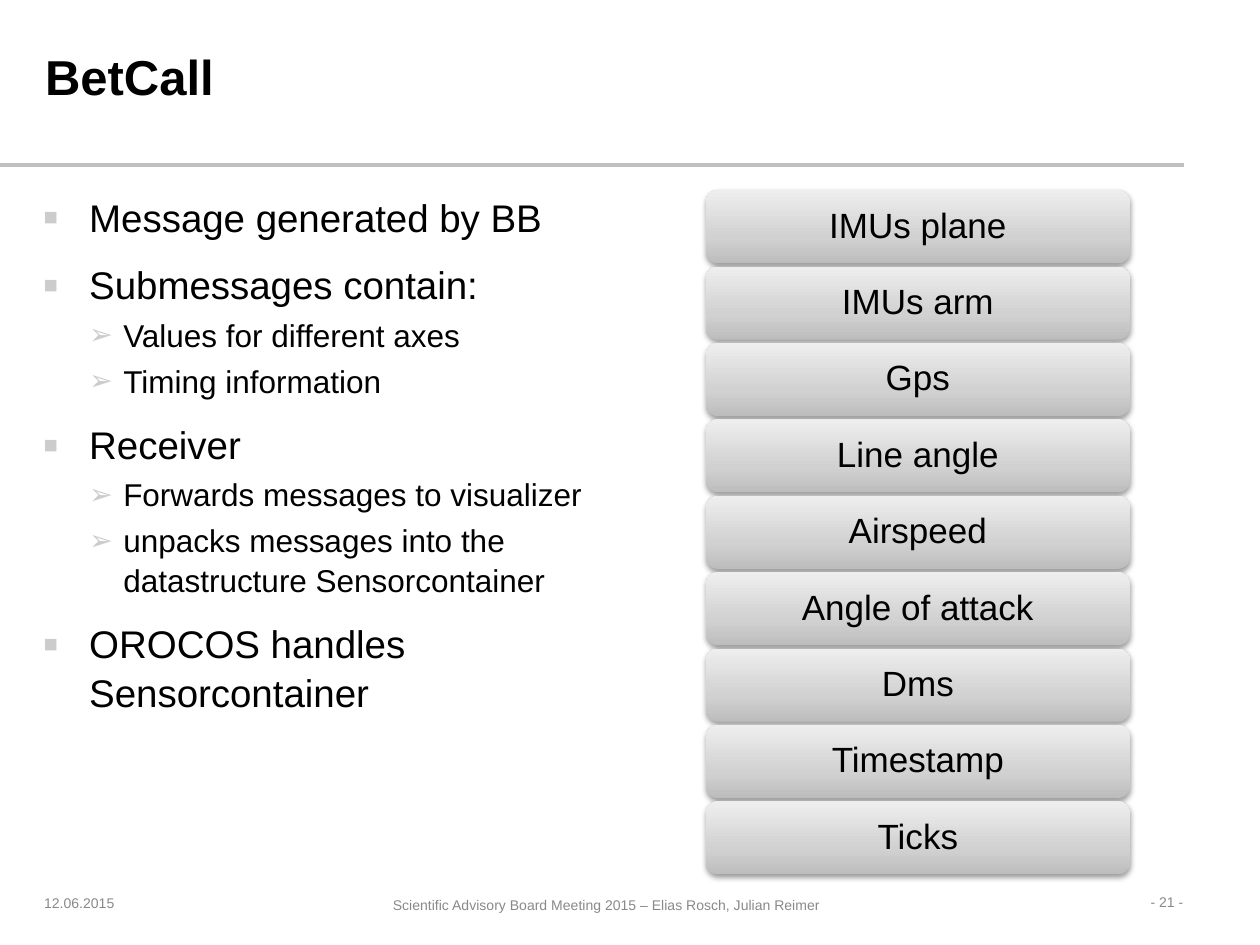
from lxml import etree
from pptx import Presentation
from pptx.dml.color import RGBColor
from pptx.enum.shapes import MSO_CONNECTOR, MSO_SHAPE
from pptx.enum.text import MSO_ANCHOR, PP_ALIGN
from pptx.oxml.ns import qn
from pptx.util import Inches, Pt

LEFT, CENTER, RIGHT = PP_ALIGN.LEFT, PP_ALIGN.CENTER, PP_ALIGN.RIGHT
TOP, MIDDLE = MSO_ANCHOR.TOP, MSO_ANCHOR.MIDDLE
BLACK, GREY, RULE, MARK = "000000", "898989", "C0C0C1", "CCCCCC"

# box, text, size, colour, bold, align, anchor, insets (x, y), line spacing
LABELS = [
    ((0.26, 0.06, 7.91, 1.14), "BetCall", 28, BLACK, True, LEFT, MIDDLE, (0.1, 0), 0.9),
    ((0.35, 6.94, 0.95, 0.46), "12.06.2015", 8, GREY, False, LEFT, MIDDLE, (0, 0), 1.0),
    ((1.64, 7.05, 6.35, 0.26),
     "Scientific Advisory Board Meeting 2015 – Elias Rosch, Julian Reimer",
     8, GREY, False, CENTER, MIDDLE, (0, 0), 1.0),
    ((8.15, 7.04, 1.34, 0.24), "- 21 -", 8, GREY, False, RIGHT, TOP, (0.1, 0.05), 1.0),
]

POINTS = [
    (1, "Message generated by BB"),
    (1, "Submessages contain:"),
    (2, "Values for different axes"),
    (2, "Timing information"),
    (1, "Receiver"),
    (2, "Forwards messages to visualizer"),
    (2, "unpacks messages into the datastructure Sensorcontainer"),
    (1, "OROCOS handles Sensorcontainer"),
]
POINTS_BOX = (0.04, 1.47, 5.24, 5.43)
# level: size, space before, margin, indent, bullet, bullet size in percent
LEVELS = {
    1: (22, 11, 0.57, -0.37, "▪", 120),
    2: (18, 3.6, 0.84, -0.27, "➢", 90),
}

FIELDS = ["IMUs plane", "IMUs arm", "Gps", "Line angle", "Airspeed",
          "Angle of attack", "Dms", "Timestamp", "Ticks"]
BAR_X, BAR_W, BAR_H = 5.6, 3.37, 0.58
FIRST_Y, LAST_Y = 1.51, 6.36
STOPS = [(0, "BDBDBD"), (35, "D1D1D1"), (100, "EEEEEE")]


def rgb(code):
    return RGBColor.from_string(code)


def child(node, tag, **attrs):
    """Append a DrawingML element and return it."""
    return etree.SubElement(node, qn("a:" + tag), {k: str(v) for k, v in attrs.items()})


def set_frame(shape, inset, anchor):
    frame = shape.text_frame
    frame.word_wrap = True
    frame.vertical_anchor = anchor
    frame.margin_left = frame.margin_right = Inches(inset[0])
    frame.margin_top = frame.margin_bottom = Inches(inset[1])
    return frame


def add_run(para, text, size, color=BLACK, bold=False):
    run = para.add_run()
    run.text = text
    font = run.font
    font.name, font.size, font.bold = "Arial", Pt(size), bold
    font.color.rgb = rgb(color)


def add_label(slide, box, text, size, color, bold, align, anchor, inset, spacing):
    shape = slide.shapes.add_textbox(*map(Inches, box))
    para = set_frame(shape, inset, anchor).paragraphs[0]
    para.alignment, para.line_spacing = align, spacing
    add_run(para, text, size, color, bold)


def add_rule(slide):
    line = slide.shapes.add_connector(
        MSO_CONNECTOR.STRAIGHT, 0, Inches(1.31), Inches(9.4), Inches(1.31))
    line.line.color.rgb = rgb(RULE)
    line.line.width = Pt(2.25)
    child(line._element.spPr, "effectLst")


def add_points(slide):
    shape = slide.shapes.add_textbox(*map(Inches, POINTS_BOX))
    frame = set_frame(shape, (0.1, 0.05), TOP)
    for i, (level, text) in enumerate(POINTS):
        size, before, margin, indent, mark, scale = LEVELS[level]
        para = frame.add_paragraph() if i else frame.paragraphs[0]
        para.level = level - 1
        para.line_spacing = 1.05
        para.space_before = Pt(before if i else 0)
        props = para._p.get_or_add_pPr()
        props.set("marL", str(Inches(margin)))
        props.set("indent", str(Inches(indent)))
        child(child(props, "buClr"), "srgbClr", val=MARK)
        child(props, "buSzPct", val=scale * 1000)
        child(props, "buFont", typeface="Arial")
        child(props, "buChar", char=mark)
        add_run(para, text, size)


def shade(shape):
    """Give a bar its grey gradient and soft drop shadow."""
    shape.fill.gradient()
    shape.fill.gradient_angle = 90
    props = shape._element.spPr
    grad = props.find(qn("a:gradFill"))
    stops = grad.find(qn("a:gsLst"))
    for old in list(stops):
        stops.remove(old)
    for pos, color in STOPS:
        child(child(stops, "gs", pos=pos * 1000), "srgbClr", val=color)
    grad.find(qn("a:lin")).set("ang", str(270 * 60000))
    shape.line.fill.background()
    shape.shadow.inherit = False
    drop = child(props.find(qn("a:effectLst")), "outerShdw", blurRad=Pt(3.1),
                 dist=Pt(1.6), dir=90 * 60000, rotWithShape=0)
    child(child(drop, "srgbClr", val=BLACK), "alpha", val=38000)


def add_bars(slide):
    pitch = (LAST_Y - FIRST_Y) / (len(FIELDS) - 1)
    for i, name in enumerate(FIELDS):
        box = (BAR_X, FIRST_Y + i * pitch, BAR_W, BAR_H)
        bar = slide.shapes.add_shape(MSO_SHAPE.ROUNDED_RECTANGLE, *map(Inches, box))
        shade(bar)
        para = set_frame(bar, (0.11, 0.07), MIDDLE).paragraphs[0]
        para.alignment, para.line_spacing = CENTER, 0.9
        add_run(para, name, 20)


def main():
    deck = Presentation()
    deck.slide_width, deck.slide_height = Inches(10), Inches(7.5)
    slide = deck.slides.add_slide(deck.slide_layouts[6])
    add_rule(slide)
    for label in LABELS:
        add_label(slide, *label)
    add_bars(slide)
    add_points(slide)
    deck.save("out.pptx")


if __name__ == "__main__":
    main()
